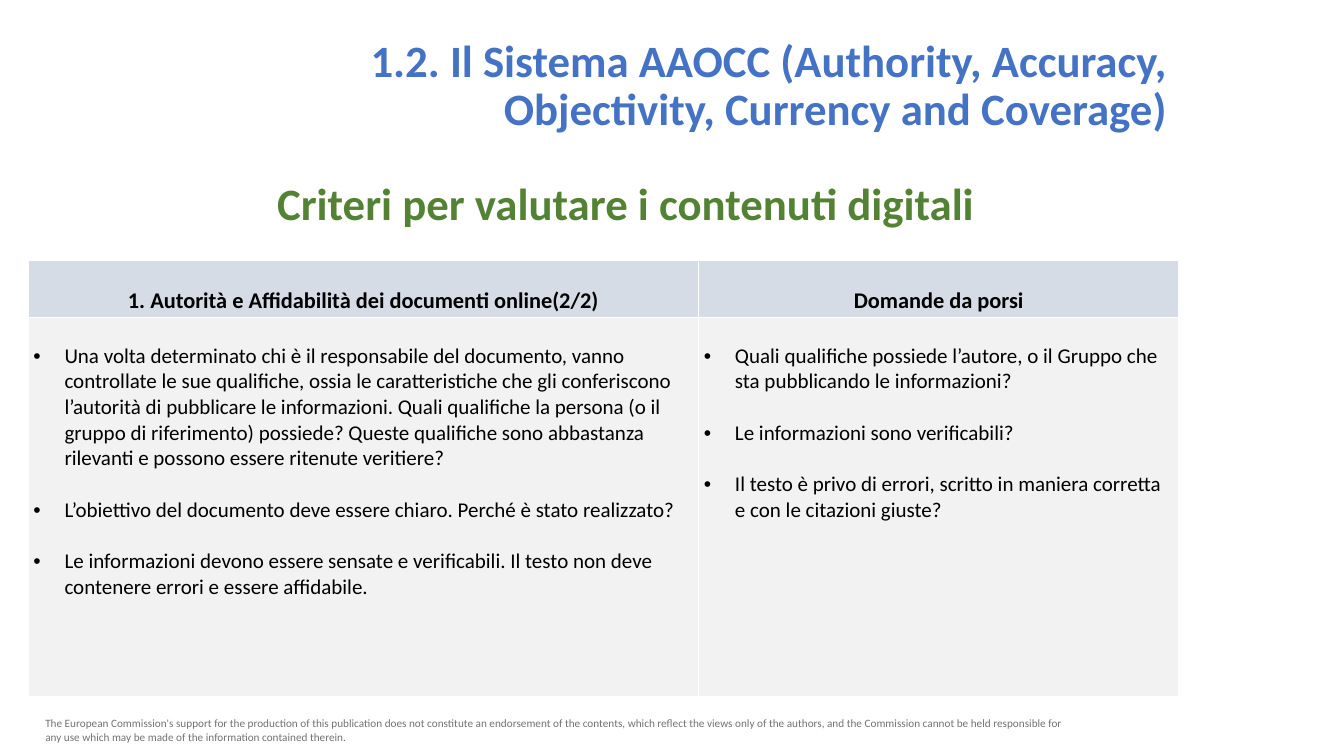
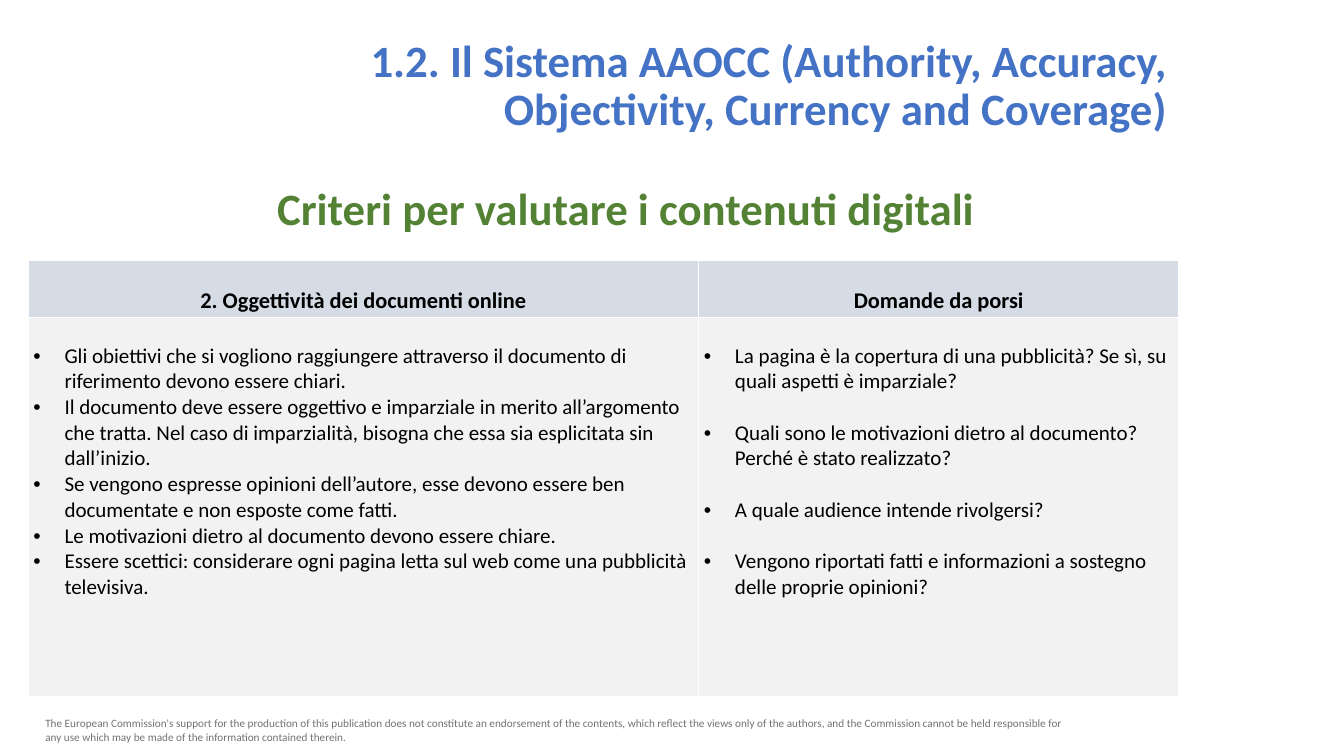
from dataclasses import dataclass
from lxml.etree import SubElement
from pptx import Presentation
from pptx.dml.color import RGBColor
from pptx.enum.text import MSO_ANCHOR, MSO_AUTO_SIZE, PP_ALIGN
from pptx.oxml import parse_xml
from pptx.oxml.ns import nsdecls, qn
from pptx.util import Inches, Pt

WIDTH, HEIGHT = Inches(13.33), Inches(7.5)
FONT = "Calibri"
BLUE, GREEN, GREY, BLACK, WHITE = "4472C4", "548235", "767171", "000000", "FFFFFF"
HEAD_FILL, BODY_FILL = "D6DCE5", "F2F2F2"
COLUMNS = (49.89, 35.71)
ROWS = (7.6, 50.13)
HEAD_LINE, BODY_LINE = Pt(19.5), Pt(18.3)

TITLE_FORMAT = {"name": FONT, "size": Pt(32), "bold": True}
HEAD_FORMAT = {"name": FONT, "size": Pt(16), "bold": True}
BODY_FORMAT = {"name": FONT, "size": Pt(15), "bold": False}
FOOTER_FORMAT = {"name": FONT, "size": Pt(8), "bold": False}

TITLE = "1.2. Il Sistema AAOCC (Authority, Accuracy, Objectivity, Currency and Coverage)"
SUBTITLE = "Criteri per valutare i contenuti digitali"
QUESTIONS = "Domande da porsi"
FOOTER = (
    "The European Commission's support for the production of this publication does not "
    "constitute an endorsement of the contents, which reflect the views only of the authors, "
    "and the Commission cannot be held responsible for any use which may be made of the "
    "information contained therein."
)


@dataclass
class Column:
    heading: str
    items: list[str]
    spaced: bool = True


@dataclass
class Criterion:
    subtitle_top: float
    columns: list[Column]


CRITERIA = [
    Criterion(22.53, [
        Column("1. Autorità e Affidabilità dei documenti online(2/2)", [
            "Una volta determinato chi è il responsabile del documento, vanno controllate le sue "
            "qualifiche, ossia le caratteristiche che gli conferiscono l’autorità di pubblicare le "
            "informazioni. Quali qualifiche la persona (o il gruppo di riferimento) possiede? "
            "Queste qualifiche sono abbastanza rilevanti e possono essere ritenute veritiere?",
            "L’obiettivo del documento deve essere chiaro. Perché è stato realizzato?",
            "Le informazioni devono essere sensate e verificabili. Il testo non deve contenere "
            "errori e essere affidabile.",
        ]),
        Column(QUESTIONS, [
            "Quali qualifiche possiede l’autore, o il Gruppo che sta pubblicando le informazioni?",
            "Le informazioni sono verificabili?",
            "Il testo è privo di errori, scritto in maniera corretta e con le citazioni giuste?",
        ]),
    ]),
    Criterion(23.2, [
        Column("2. Oggettività dei documenti online", [
            "Gli obiettivi che si vogliono raggiungere attraverso il documento di riferimento "
            "devono essere chiari.",
            "Il documento deve essere oggettivo e imparziale in merito all’argomento che tratta. "
            "Nel caso di imparzialità, bisogna che essa sia esplicitata sin dall’inizio.",
            "Se vengono espresse opinioni dell’autore, esse devono essere ben documentate e non "
            "esposte come fatti.",
            "Le motivazioni dietro al documento devono essere chiare.",
            "Essere scettici: considerare ogni pagina letta sul web come una pubblicità televisiva.",
        ], spaced=False),
        Column(QUESTIONS, [
            "La pagina è la copertura di una pubblicità? Se sì, su quali aspetti è imparziale?",
            "Quali sono le motivazioni dietro al documento? Perché è stato realizzato?",
            "A quale audience intende rivolgersi?",
            "Vengono riportati fatti e informazioni a sostegno delle proprie opinioni?",
        ]),
    ]),
]


def x(share: float) -> int:
    return round(WIDTH * share / 100)


def y(share: float) -> int:
    return round(HEIGHT * share / 100)


def rgb(value: str) -> RGBColor:
    return RGBColor.from_string(value)


def write(p, text: str, formats: dict, color: str, align=PP_ALIGN.LEFT) -> None:
    p.alignment = align
    r = p.add_run()
    r.text = text
    for name, value in formats.items():
        setattr(r.font, name, value)
    r.font.color.rgb = rgb(color)


def add_bullet(p) -> None:
    pPr = p._p.get_or_add_pPr()
    indent = Inches(0.31)
    pPr.set("marL", str(indent))
    pPr.set("indent", str(-indent))
    SubElement(pPr, qn("a:buFont")).set("typeface", "Arial")
    SubElement(pPr, qn("a:buChar")).set("char", "•")


def add_text(s, box: tuple, text: str, formats: dict, color: str) -> None:
    left, top, width, height = box
    tf = s.shapes.add_textbox(x(left), y(top), x(width), y(height)).text_frame
    tf.word_wrap = True
    write(tf.paragraphs[0], text, formats, color)


def add_title(s) -> None:
    sp = s.shapes.title
    box = {"left": x(18.45), "top": y(4.4), "width": x(69.17), "height": y(14.27)}
    for name, value in box.items():
        setattr(sp, name, value)
    tf = sp.text_frame
    tf.word_wrap = True
    tf.auto_size = MSO_AUTO_SIZE.NONE
    tf.vertical_anchor = MSO_ANCHOR.TOP
    p = tf.paragraphs[0]
    p.line_spacing = 0.9
    write(p, TITLE, TITLE_FORMAT, BLUE, PP_ALIGN.RIGHT)


def style_cell(cell, fill: str, margin_top: int) -> None:
    margins = {"margin_left": Inches(0.05), "margin_right": Inches(0.05),
               "margin_top": margin_top, "margin_bottom": 0}
    for name, value in margins.items():
        setattr(cell, name, value)
    cell.fill.solid()
    cell.fill.fore_color.rgb = rgb(fill)
    tcPr = cell._tc.get_or_add_tcPr()
    for i, side in enumerate("LRTB"):
        tcPr.insert(i, parse_xml(
            f'<a:ln{side} w="{Pt(1)}" {nsdecls("a")}><a:solidFill>'
            f'<a:srgbClr val="{WHITE}"/></a:solidFill></a:ln{side}>'))


def fill_column(head, body, column: Column) -> None:
    style_cell(head, HEAD_FILL, HEAD_LINE)
    write(head.text_frame.paragraphs[0], column.heading, HEAD_FORMAT, BLACK, PP_ALIGN.CENTER)
    style_cell(body, BODY_FILL, BODY_LINE)
    tf = body.text_frame
    for i, item in enumerate(column.items):
        p = tf.add_paragraph() if i else tf.paragraphs[0]
        add_bullet(p)
        if i and column.spaced:
            p.space_before = BODY_LINE
        write(p, item, BODY_FORMAT, BLACK)


def add_criteria_table(s, columns: list[Column]) -> None:
    table = s.shapes.add_table(len(ROWS), len(COLUMNS), x(2.1), y(34.4),
                               x(sum(COLUMNS)), y(sum(ROWS))).table
    table.first_row = table.horz_banding = False
    for col, share in zip(table.columns, COLUMNS):
        col.width = x(share)
    for row, share in zip(table.rows, ROWS):
        row.height = y(share)
    for i, column in enumerate(columns):
        fill_column(table.cell(0, i), table.cell(1, i), column)


def add_criterion_slide(prs, criterion: Criterion) -> None:
    s = prs.slides.add_slide(prs.slide_layouts[5])
    add_text(s, (2.63, 94.13, 78.47, 4.93), FOOTER, FOOTER_FORMAT, GREY)
    add_title(s)
    add_text(s, (19.88, criterion.subtitle_top, 60.32, 8.53), SUBTITLE, TITLE_FORMAT, GREEN)
    add_criteria_table(s, criterion.columns)


def main() -> None:
    prs = Presentation()
    prs.slide_width, prs.slide_height = WIDTH, HEIGHT
    for criterion in CRITERIA:
        add_criterion_slide(prs, criterion)
    prs.save("out.pptx")


if __name__ == "__main__":
    main()
